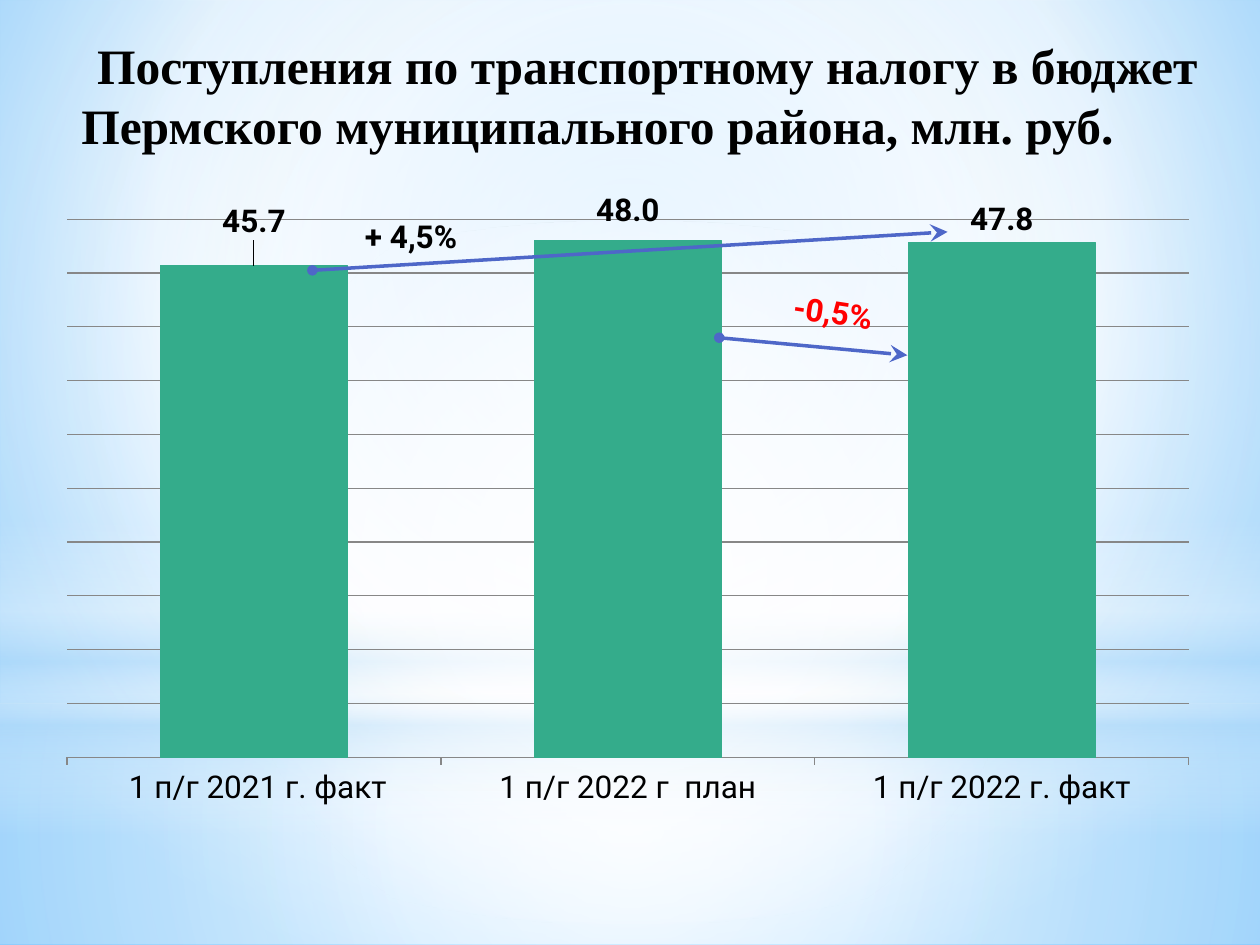
import pptx
import pptx.chart.data
import pptx.dml.color
import pptx.enum.chart
import pptx.enum.shapes
import pptx.enum.text
import pptx.oxml
import pptx.oxml.ns
import pptx.util

Pt = pptx.util.Pt
qn = pptx.oxml.ns.qn
SHAPES = pptx.enum.shapes.MSO_SHAPE
CHARTS = pptx.enum.chart

COLORS = {
    "sky": "9ED5FF", "deep_sky": "5BB9FF", "haze": "B4DCFA", "white": "FFFFFF",
    "bar": "34AC8B", "arrow": "4E67C8", "grid": "878787",
    "text": "000000", "fall": "FF0000",
}
BODY_FONT, TITLE_FONT = "Roboto", "Times New Roman"
CENTER = (50, 50, 50, 50)


def rgb(name):
    return pptx.dml.color.RGBColor.from_string(COLORS[name])


def xml(prefix, text):
    """Make an element, declaring its namespace on the first tag."""
    tag = text.split(">", 1)[0].rstrip("/").split(" ", 1)[0]
    return pptx.oxml.parse_xml(
        text.replace(tag, f"{tag} {pptx.oxml.ns.nsdecls(prefix)}", 1))


def style_font(font, color="text", **values):
    values = {"name": BODY_FONT, "size": Pt(18), "bold": False, **values}
    for name, value in values.items():
        setattr(font, name, value)
    font.color.rgb = rgb(color)


def paint_gradient(fill, owner, stops, focus=None):
    """Stops are (position, colour, opacity); no focus means top to bottom."""
    fill.gradient()
    old = next(owner.iter(qn("a:gradFill")))
    marks = "".join(
        f'<a:gs pos="{place * 1000}"><a:srgbClr val="{COLORS[color]}">'
        f'<a:alpha val="{opacity * 1000}"/></a:srgbClr></a:gs>'
        for place, color, opacity in stops)
    if focus:
        sides = " ".join(f'{side}="{value * 1000}"' for side, value in zip("ltrb", focus))
        course = f'<a:path path="circle"><a:fillToRect {sides}/></a:path>'
    else:
        course = '<a:lin ang="5400000" scaled="0"/>'
    old.getparent().replace(old, xml(
        "a", f'<a:gradFill rotWithShape="1"><a:gsLst>{marks}</a:gsLst>{course}</a:gradFill>'))


def add_backdrop(page, box):
    left, top, width, height = box
    paint_gradient(page.background.fill, page._element,
                   [(0, "sky", 100), (60, "white", 100), (100, "deep_sky", 100)],
                   (20, 10, 20, 60))
    horizon = 402
    layers = [
        # lower and upper haze
        (SHAPES.RECTANGLE, horizon, height - horizon,
         [(0, "white", 91), (37, "white", 76), (100, "haze", 79)], CENTER),
        (SHAPES.RECTANGLE, 0, horizon,
         [(0, "white", 89), (48, "white", 62), (100, "haze", 79)], CENTER),
        # bands along the horizon
        (SHAPES.RECTANGLE, 297, 180,
         [(0, "white", 0), (29, "white", 30), (45, "haze", 40),
          (55, "white", 26), (65, "haze", 60), (100, "white", 0)], None),
        # central glow
        (SHAPES.OVAL, 126, horizon, [(0, "white", 100), (56, "white", 0)], CENTER),
    ]
    for kind, offset, depth, stops, focus in layers:
        layer = page.shapes.add_shape(kind, Pt(left), Pt(top + offset), Pt(width), Pt(depth))
        layer.shadow.inherit = False
        layer.line.fill.background()
        paint_gradient(layer.fill, layer._element, stops, focus)


def add_text(page, box, text, font, frame_values=None):
    label = page.shapes.add_textbox(*map(Pt, box))
    frame = label.text_frame
    for name, value in {"word_wrap": True, **(frame_values or {})}.items():
        setattr(frame, name, value)
    span = frame.paragraphs[0].add_run()
    span.text = text
    style_font(span.font, **font)
    return label


def add_title(page, box):
    title = add_text(
        page, box,
        "Поступления по транспортному налогу в бюджет "
        "Пермского муниципального района, млн. руб.",
        {"name": TITLE_FONT, "size": Pt(28.3), "bold": True},
        {"margin_left": Pt(21.5), "vertical_anchor": pptx.enum.text.MSO_ANCHOR.MIDDLE})
    para = title.text_frame.paragraphs[0]
    para._p.get_or_add_pPr().set("indent", str(Pt(9)))


def add_tax_chart(page, box):
    data = pptx.chart.data.CategoryChartData(number_format="#,##0.0")
    data.categories = [" 1 п/г 2021 г. факт", "1 п/г 2022 г  план", "1 п/г 2022 г. факт"]
    data.add_series("Series 1", (45.7, 48, 47.8))
    chart = page.shapes.add_chart(
        CHARTS.XL_CHART_TYPE.COLUMN_CLUSTERED, *map(Pt, box), data).chart
    chart.has_title = chart.has_legend = False
    style_font(chart.font)

    # Plot area and bars
    area = chart._chartSpace.chart.plotArea
    for old in area.findall(qn("c:layout")):
        area.remove(old)
    place = "".join(f'<c:{name} val="{value}"/>' for name, value in
                    zip("xywh", (0.02, 0.034, 0.967, 0.799)))
    area.insert(0, xml("c", '<c:layout><c:manualLayout><c:layoutTarget val="inner"/>'
                       '<c:xMode val="edge"/><c:yMode val="edge"/>'
                       f'{place}</c:manualLayout></c:layout>'))
    plot = chart.plots[0]
    plot.gap_width, plot.vary_by_categories = 100, False
    series = plot.series[0]
    series.format.fill.solid()
    series.format.fill.fore_color.rgb = rgb("bar")
    series.format.line.color.rgb = rgb("bar")
    series.format.line.width = Pt(0.75)

    # Axes
    values, categories = chart.value_axis, chart.category_axis
    for name, value in {"visible": False, "minimum_scale": 0, "maximum_scale": 50,
                        "major_unit": 5, "has_major_gridlines": True}.items():
        setattr(values, name, value)
    categories.major_tick_mark = CHARTS.XL_TICK_MARK.OUTSIDE
    for rule in (values.major_gridlines, categories):
        rule.format.line.color.rgb = rgb("grid")
        rule.format.line.width = Pt(0.75)

    # Value labels, the first two raised above their usual place
    labels = series.data_labels
    for name, value in {"show_value": True, "number_format": "#,##0.0",
                        "number_format_is_linked": False,
                        "position": CHARTS.XL_LABEL_POSITION.OUTSIDE_END}.items():
        setattr(labels, name, value)
    style_font(labels.font, bold=True)
    for index, shift in enumerate((-0.03, -0.01)):
        label = series.points[index].data_label
        style_font(label.font, bold=True)
        label.position = CHARTS.XL_LABEL_POSITION.OUTSIDE_END
        node = labels._element.findall(qn("c:dLbl"))[index]
        node.insert(1, xml("c", '<c:layout><c:manualLayout><c:x val="0"/>'
                           f'<c:y val="{shift}"/></c:manualLayout></c:layout>'))
        node.insert(2, xml("c", '<c:numFmt formatCode="#,##0.0" sourceLinked="0"/>'))


def add_change(page, start, end, box, text, color="text", align="LEFT", rotation=0):
    """An arrow between two bars, with the change written beside it."""
    arrow = page.shapes.add_connector(
        pptx.enum.shapes.MSO_CONNECTOR.STRAIGHT, *map(Pt, start + end))
    arrow.line.color.rgb = rgb("arrow")
    arrow.line.width = Pt(2)
    outline = arrow.line._get_or_add_ln()
    outline.append(xml("a", '<a:headEnd type="oval"/>'))
    outline.append(xml("a", '<a:tailEnd type="stealth" w="lg" len="lg"/>'))
    arrow._element.spPr.append(xml("a", "<a:effectLst/>"))

    label = add_text(page, box, text, {"color": color, "bold": True})
    label.text_frame.paragraphs[0].alignment = getattr(pptx.enum.text.PP_ALIGN, align)
    label.rotation = rotation


def main():
    deck = pptx.Presentation()
    deck.slide_width, deck.slide_height = Pt(720), Pt(540)
    page = deck.slides.add_slide(deck.slide_layouts[6])
    add_backdrop(page, (0, 0, 720, 540))
    add_title(page, (25, 10, 683.5, 88.5))
    add_tax_chart(page, (25, 110, 663, 387))
    add_change(page, (178.5, 154.5), (541.5, 132.5), (201.5, 120.5, 158, 29), "+ 4,5%")
    add_change(page, (411, 193), (518.5, 203), (422.5, 162, 83.5, 29), "-0,5%",
               color="fall", align="RIGHT", rotation=8.6)
    deck.save("out.pptx")


if __name__ == "__main__":
    main()
